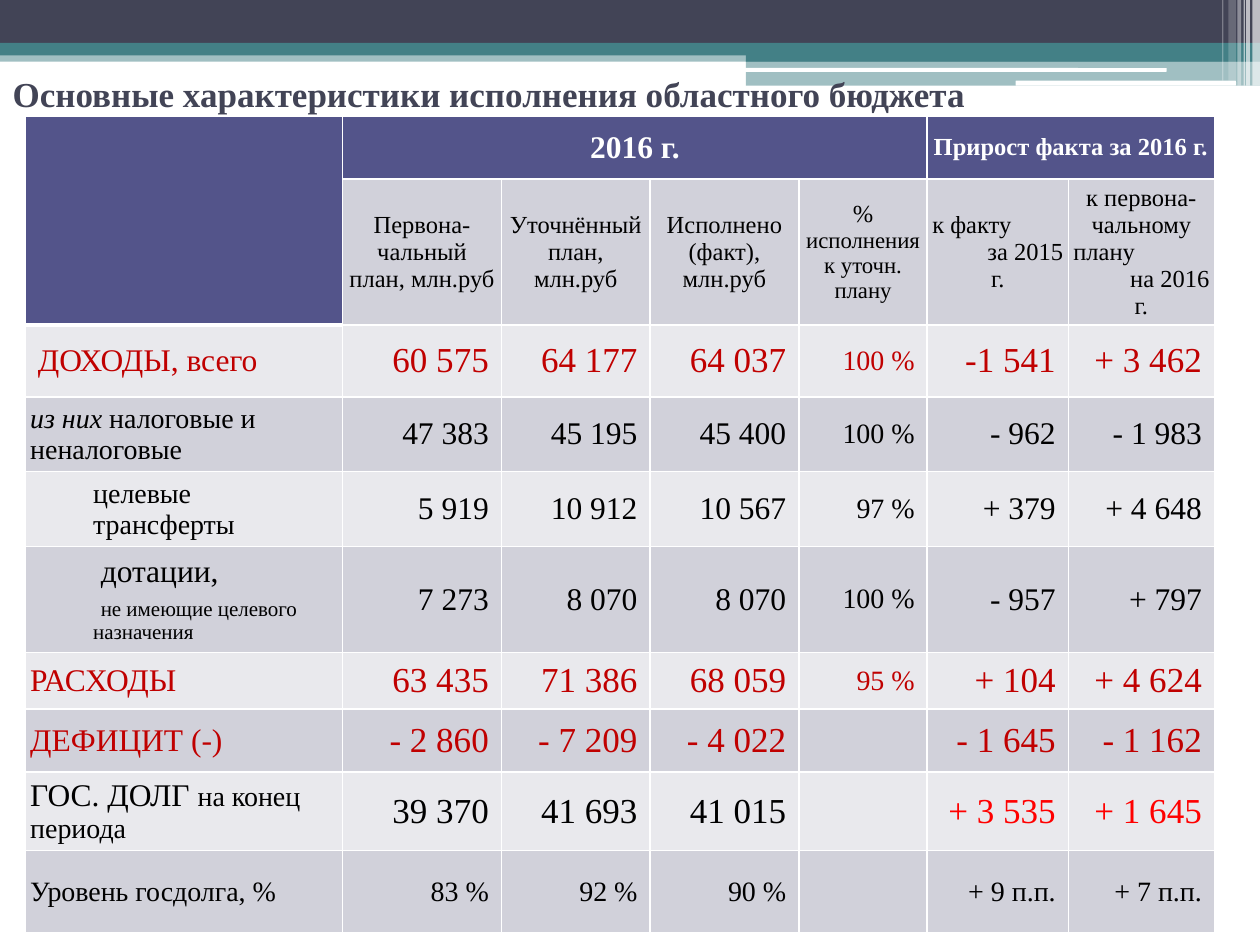
"""Build the slide on how the regional budget was carried out."""
from dataclasses import dataclass
from typing import NamedTuple

import lxml.etree
import pptx
import pptx.dml.color
import pptx.enum.shapes
import pptx.enum.text
import pptx.oxml.ns
import pptx.util

Inches = pptx.util.Inches
qn = pptx.oxml.ns.qn
Kind = pptx.enum.shapes.MSO_SHAPE
Align = pptx.enum.text.PP_ALIGN
Anchor = pptx.enum.text.MSO_ANCHOR

FONT = "Times New Roman"
HUES = {
    "white": "FFFFFF", "black": "000000", "slate": "424456", "teal": "438086",
    "head": "53548A", "dark": "D1D1DA", "light": "E9E9ED",
    "red": "C00000", "bright": "FF0000",
}


class Bar(NamedTuple):
    left: float
    top: float
    width: float
    height: float
    hue: str
    alpha: int = 100
    kind: int = Kind.RECTANGLE


class Run(NamedTuple):
    text: str
    size: float
    hue: str = "black"
    bold: bool = False
    slant: bool = False


@dataclass
class Line:
    runs: list[Run]
    align: int = Align.LEFT
    left: float = 0
    first: float = 0
    before: float = 0


@dataclass
class Row:
    label: list[Line]
    nums: list[str]
    height: float
    size: int = 18
    hue: str = "black"
    gain: str = ""
    inset: float = 0.04


def tint(fill, hue: str) -> None:
    """Make a fill solid in a named colour."""
    fill.solid()
    fill.fore_color.rgb = pptx.dml.color.RGBColor.from_string(HUES[hue])


def say(para, text: str, size: float, hue: str = "black",
        bold: bool = False, slant: bool = False) -> None:
    """Add a formatted run to a paragraph."""
    run = para.add_run()
    run.text = text
    font = run.font
    font.name, font.size = FONT, pptx.util.Pt(size)
    font.bold, font.italic = bold, slant
    font.color.rgb = pptx.dml.color.RGBColor.from_string(HUES[hue])


def draw(shapes, bar: Bar) -> None:
    """Draw one bar of the banner."""
    shape = shapes.add_shape(bar.kind, *map(Inches, bar[:4]))
    shape.shadow.inherit = False
    shape.line.fill.background()
    tint(shape.fill, bar.hue)
    if bar.alpha < 100:
        shade = next(shape.element.iter(qn("a:srgbClr")))
        lxml.etree.SubElement(shade, qn("a:alpha"), val=str(bar.alpha * 1000))


def edge(cell, width: float = 1, base: float = 1) -> None:
    """Give a cell white borders, with its own width at the base."""
    props = cell._tc.get_or_add_tcPr()
    for side in "LRTB":
        size = base if side == "B" else width
        line = lxml.etree.SubElement(props, qn("a:ln" + side), w=str(pptx.util.Pt(size)))
        solid = lxml.etree.SubElement(line, qn("a:solidFill"))
        lxml.etree.SubElement(solid, qn("a:srgbClr"), val=HUES["white"])


def write(cell, lines: list[Line], side: float = 0.1, top: float = 0.05) -> None:
    """Set the lines of text in a cell."""
    cell.vertical_anchor = Anchor.MIDDLE
    cell.margin_left = cell.margin_right = Inches(side)
    cell.margin_top = cell.margin_bottom = Inches(top)
    for spot, line in enumerate(lines):
        frame = cell.text_frame
        para = frame.add_paragraph() if spot else frame.paragraphs[0]
        para.alignment = line.align
        para.space_before = pptx.util.Pt(line.before)
        if line.left:
            props = para._p.get_or_add_pPr()
            props.set("marL", str(Inches(line.left)))
            props.set("indent", str(Inches(line.first)))
        for run in line.runs:
            say(para, **run._asdict())


def mid(text: str, size: float = 14, align: int = Align.CENTER) -> Line:
    """Make a line for a column head."""
    return Line([Run(text, size)], align)


def name(text: str, size: float = 18, hue: str = "black", **form) -> Line:
    """Make a line for a row label."""
    return Line([Run(text, size, hue)], **form)


BARS = [
    Bar(0, 0.4, 10, 0.09, "teal", 50), Bar(0, 0, 10, 0.34, "slate"),
    Bar(0, 0.34, 10, 0.1, "teal"), Bar(5.92, 0.39, 4.08, 0.1, "teal"),
    Bar(5.92, 0.48, 4.08, 0.2, "teal", 50),
    Bar(5.91, 0.54, 3.35, 0.03, "white", kind=Kind.ROUNDED_RECTANGLE),
    Bar(8.06, 0.64, 1.75, 0.04, "white", kind=Kind.ROUNDED_RECTANGLE),
] + [Bar(left, 0, width, height, "white", alpha) for left, width, height, alpha in (
    (9.94, 0.06, 0.68, 65), (9.89, 0.03, 0.68, 65), (9.87, 0.01, 0.68, 60),
    (9.82, 0.03, 0.68, 40), (9.75, 0.06, 0.64, 20), (9.7, 0.01, 0.64, 30))]

COLS = [2.52, 1.26, 1.18, 1.18, 1.02, 1.12, 1.16]
HEADS = [
    [mid("Первона-чальный план, млн.руб")],
    [mid("Уточнённый план, млн.руб")],
    [mid("Исполнено (факт), млн.руб")],
    [Line([Run("% ", 14), Run("исполнения к уточн. плану", 13)], Align.CENTER)],
    [mid("к факту", align=Align.LEFT), mid("за 2015", align=Align.RIGHT), mid("г.")],
    [mid("к первона-чальному"), mid("плану", align=Align.LEFT),
     mid("на 2016", align=Align.RIGHT), mid("г.")],
]
ROWS = [
    Row([name("ДОХОДЫ, всего", hue="red")],
        ["60 575", "64 177", "64 037", "100 %", "-1 541", "+ 3 462"],
        0.57, 20, "red", inset=0.1),
    Row([Line([Run("из них", 16, slant=True), Run(" налоговые и неналоговые", 16)])],
        ["47 383", "45 195", "45 400", "100 %", "- 962", "- 1 983"], 0.59),
    Row([name("целевые трансферты", 16, left=0.5)],
        ["5 919", "10 912", "10 567", "97 %", "+ 379", "+ 4 648"], 0.59),
    Row([name("дотации,", left=0.5, first=0.06),
         name("не имеющие целевого назначения", 12, left=0.5, first=0.06, before=5)],
        ["7 273", "8 070", "8 070", "100 %", "- 957", "+ 797"], 0.84),
    Row([name("РАСХОДЫ", hue="red")],
        ["63 435", "71 386", "68 059", "95 %", "+ 104", "+ 4 624"], 0.45, 20, "red"),
    Row([name("ДЕФИЦИТ (-)", hue="red")],
        ["- 2 860", "- 7 209", "- 4 022", "", "- 1 645", "- 1 162"], 0.5, 20, "red"),
    Row([Line([Run("ГОС. ДОЛГ ", 18), Run("на конец периода", 16)])],
        ["39 370", "41 693", "41 015", "", "+ 3 535", "+ 1 645"],
        0.56, 20, gain="bright"),
    Row([name("Уровень госдолга, %", 16)],
        ["83 %", "92 %", "90 %", "", "+ 9 п.п.", "+ 7 п.п."], 0.65, 16),
]


def grid(shapes) -> None:
    """Draw the budget table."""
    highs = [0.5, 1.16] + [row.height for row in ROWS]
    frame = shapes.add_table(len(highs), len(COLS), Inches(0.2), Inches(0.92),
                             Inches(sum(COLS)), Inches(sum(highs)))
    table = frame.table
    table.first_row = table.horz_banding = False
    for col, width in zip(table.columns, COLS):
        col.width = Inches(width)
    for spot, (row, high) in enumerate(zip(table.rows, highs)):
        row.height = Inches(high)
        for col, cell in enumerate(row.cells):
            head = spot == 0 or (spot == 1 and col == 0)
            edge(cell, base=3 if head and col == 0 else 1)
            tint(cell.fill, "head" if head else "dark" if spot % 2 else "light")
    for first, last in (((0, 0), (1, 0)), ((0, 1), (0, 4)), ((0, 5), (0, 6))):
        table.cell(*first).merge(table.cell(*last))
    write(table.cell(0, 1), [Line([Run("2016 г.", 18, "white", True)], Align.CENTER)])
    write(table.cell(0, 5), [Line([Run("Прирост факта за 2016 г.", 14, "white", True)],
                                  Align.CENTER)], 0.04, 0.04)
    for col, lines in enumerate(HEADS, 1):
        write(table.cell(1, col), lines, 0.04, 0.04)
    for spot, row in enumerate(ROWS, 2):
        write(table.cell(spot, 0), row.label, row.inset)
        for col, num in enumerate(row.nums, 1):
            size = 16 if col == 4 else row.size
            hue = row.gain if row.gain and col > 4 else row.hue
            if num:
                write(table.cell(spot, col), [Line([Run(num, size, hue)], Align.RIGHT)])


def main() -> None:
    """Make the deck and save it."""
    deck = pptx.Presentation()
    deck.slide_width, deck.slide_height = Inches(10), Inches(7.5)
    slide = deck.slides.add_slide(deck.slide_layouts[5])
    for bar in BARS:
        draw(slide.shapes, bar)
    title = slide.shapes.title
    title.element.getparent().append(title.element)
    title.left, title.top, title.width, title.height = map(Inches, (0, 0.47, 10.16, 0.55))
    frame = title.text_frame
    frame.auto_size = pptx.enum.text.MSO_AUTO_SIZE.NONE
    frame.vertical_anchor = Anchor.MIDDLE
    frame.paragraphs[0].alignment = Align.LEFT
    say(frame.paragraphs[0], "Основные характеристики исполнения областного бюджета",
        size=20, hue="slate", bold=True)
    grid(slide.shapes)
    deck.save("out.pptx")


if __name__ == "__main__":
    main()
